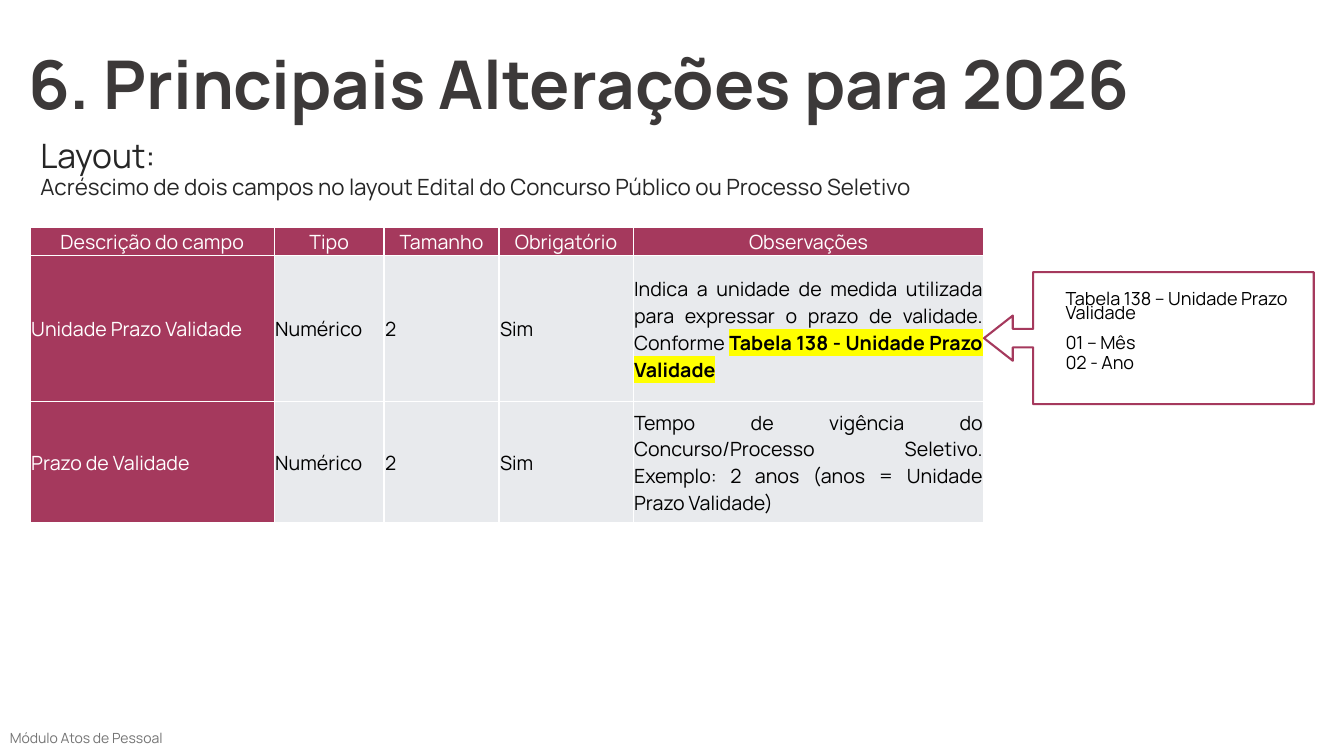
from dataclasses import dataclass
from typing import Any

import lxml.etree
import pptx
import pptx.dml.color
import pptx.enum.shapes
import pptx.enum.text
import pptx.oxml.ns
import pptx.util

Inches = pptx.util.Inches
Align = pptx.enum.text.PP_ALIGN
Anchor = pptx.enum.text.MSO_ANCHOR
qn = pptx.oxml.ns.qn

COLORS = {
    "wine": "A5395D", "pale": "E8EAED", "white": "FFFFFF", "black": "000000",
    "title": "3C3939", "lead": "262626", "foot": "747474", "mark": "FFFF00",
}
FONT = "Manrope"
WIDTHS = (2.42, 1.09, 1.14, 1.33, 3.48)
HEIGHTS = (0.25, 1.45, 1.2)
HEADS = ("Descrição do campo", "Tipo", "Tamanho", "Obrigatório", "Observações")


@dataclass
class Field:
    name: str
    kind: str
    size: str
    must: str
    note: str
    bold: str = ""


@dataclass
class Line:
    text: str
    before: float = 0


FIELDS = (
    Field("Unidade Prazo Validade", "Numérico", "2", "Sim",
          "Indica a unidade de medida utilizada para expressar o prazo de validade. Conforme ",
          "Tabela 138 - Unidade Prazo Validade"),
    Field("Prazo de Validade", "Numérico", "2", "Sim",
          "Tempo de vigência do Concurso/Processo Seletivo. "
          "Exemplo: 2 anos (anos = Unidade Prazo Validade)"),
)
CODES = (
    Line("Tabela 138 – Unidade Prazo Validade"),
    Line("01 – Mês", 12),
    Line("02 - Ano", 5),
)


def rgb(name: str) -> pptx.dml.color.RGBColor:
    return pptx.dml.color.RGBColor.from_string(COLORS[name])


def write(para: Any, text: str, *, size: float, color: str, bold: bool = False,
          align: Any = Align.LEFT, space: float = 1.0, before: float = 0,
          mark: str = "") -> None:
    """Add a formatted run to a paragraph."""
    para.alignment = align
    para.line_spacing = space
    para.space_before = pptx.util.Pt(before)
    run = para.add_run()
    run.text = text
    run.font.name = FONT
    run.font.size = pptx.util.Pt(size)
    run.font.bold = bold
    run.font.color.rgb = rgb(color)
    if mark:
        light = lxml.etree.Element(qn("a:highlight"))
        lxml.etree.SubElement(light, qn("a:srgbClr"), val=COLORS[mark])
        run.font.fill._xPr.find(qn("a:solidFill")).addnext(light)


def place(shape: Any, left: float, top: float, width: float, height: float,
          anchor: Any = Anchor.TOP) -> Any:
    """Move a text shape and return its frame."""
    shape.left, shape.top = Inches(left), Inches(top)
    shape.width, shape.height = Inches(width), Inches(height)
    frame = shape.text_frame
    frame.word_wrap = True
    frame.auto_size = pptx.enum.text.MSO_AUTO_SIZE.NONE
    frame.vertical_anchor = anchor
    return frame


def add_box(slide: Any, left: float, top: float, width: float, height: float) -> Any:
    return place(slide.shapes.add_textbox(0, 0, 0, 0), left, top, width, height)


def style_cell(cell: Any, fill: str) -> None:
    """Set the margins, borders and fill of a cell."""
    cell.margin_left = cell.margin_right = cell.margin_top = Inches(0.01)
    cell.margin_bottom = 0
    cell.vertical_anchor = Anchor.MIDDLE
    props = cell._tc.get_or_add_tcPr()
    for side in ("lnL", "lnR", "lnT", "lnB"):
        edge = lxml.etree.SubElement(props, qn(f"a:{side}"), w=str(pptx.util.Pt(1)))
        paint = lxml.etree.SubElement(edge, qn("a:solidFill"))
        lxml.etree.SubElement(paint, qn("a:srgbClr"), val=COLORS["white"])
    cell.fill.solid()
    cell.fill.fore_color.rgb = rgb(fill)


def add_fields(slide: Any) -> None:
    """Draw the table of new fields."""
    rows = [HEADS] + [(f.name, f.kind, f.size, f.must, f.note) for f in FIELDS]
    table = slide.shapes.add_table(
        len(rows), len(HEADS), Inches(0.3), Inches(2.26),
        Inches(sum(WIDTHS)), Inches(sum(HEIGHTS))).table
    for col, width in zip(table.columns, WIDTHS):
        col.width = Inches(width)
    for row, height in zip(table.rows, HEIGHTS):
        row.height = Inches(height)
    for i, texts in enumerate(rows):
        for j, text in enumerate(texts):
            cell = table.cell(i, j)
            dark = i == 0 or j == 0
            style_cell(cell, "wine" if dark else "pale")
            write(cell.text_frame.paragraphs[0], text, size=14,
                  color="white" if dark else "black",
                  align=Align.JUSTIFY if i else Align.CENTER)
    for i, field in enumerate(FIELDS, 1):
        if field.bold:
            para = table.cell(i, len(HEADS) - 1).text_frame.paragraphs[0]
            write(para, field.bold, size=14, color="black", bold=True,
                  align=Align.JUSTIFY, mark="mark")


def add_codes(slide: Any) -> None:
    """Draw the callout with the unit codes."""
    frame = add_box(slide, 9.97, 2.88, 3.07, 0.99)
    for i, line in enumerate(CODES):
        para = frame.add_paragraph() if i else frame.paragraphs[0]
        props = para._p.get_or_add_pPr()
        props.set("marL", str(Inches(0.5)))
        props.set("indent", "0")
        write(para, line.text, size=12.9, color="black", space=0.61, before=line.before)
    arrow = slide.shapes.add_shape(
        pptx.enum.shapes.MSO_SHAPE.LEFT_ARROW_CALLOUT,
        Inches(9.76), Inches(2.7), Inches(3.27), Inches(1.31))
    for i, value in enumerate((0.14, 0.171, 0.218, 0.851)):
        arrow.adjustments[i] = value
    arrow.shadow.inherit = False
    arrow.fill.background()
    arrow.line.color.rgb = rgb("wine")
    arrow.line.width = pptx.util.Pt(1.5)


def main() -> None:
    deck = pptx.Presentation()
    deck.slide_width, deck.slide_height = Inches(13.33), Inches(7.5)
    slide = deck.slides.add_slide(deck.slide_layouts[0])

    # Title and lead
    title = place(slide.shapes.title, 0.18, 0.37, 11.38, 0.91)
    write(title.paragraphs[0], "6. Principais Alterações para 2026",
          size=48, color="title", bold=True)
    lead = place(slide.placeholders[1], 0.3, 1.25, 12.45, 0.87, Anchor.MIDDLE)
    para = lead.paragraphs[0]
    write(para, "Layout:", size=24, color="lead", space=0.9)
    para.add_line_break()
    write(para, "Acréscimo de dois campos no layout Edital do Concurso Público ou Processo Seletivo",
          size=16, color="lead", space=0.9)

    # Table and callout
    add_fields(slide)
    add_codes(slide)

    # Footer
    foot = add_box(slide, 0, 7.21, 12.75, 0.22)
    write(foot.paragraphs[0], "Módulo Atos de Pessoal", size=10, color="foot", space=0.9)
    deck.save("out.pptx")


if __name__ == "__main__":
    main()
